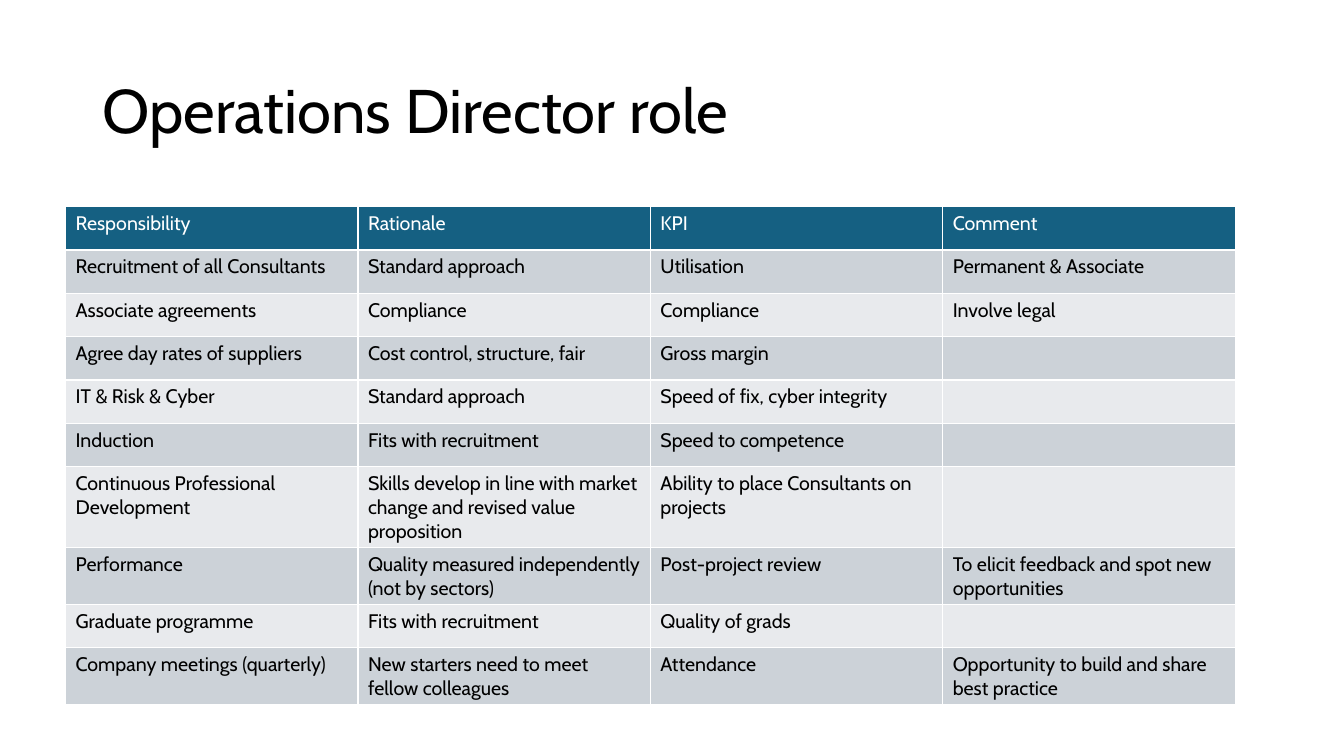
from pptx import Presentation
from pptx.dml.color import RGBColor
from pptx.enum.text import MSO_ANCHOR
from pptx.oxml import parse_xml
from pptx.oxml.ns import nsdecls
from pptx.util import Inches, Pt

FONT = "Cabin"
BLACK, WHITE = "000000", "FFFFFF"
HEADER_FILL = "156082"
BAND_FILLS = ("CCD2D8", "E8EAED")

TITLE = "Operations Director role"
HEADINGS = ("Responsibility", "Rationale", "KPI", "Comment")
DUTIES = [
    ("Recruitment of all Consultants", "Standard approach", "Utilisation",
     "Permanent & Associate"),
    ("Associate agreements", "Compliance", "Compliance", "Involve legal"),
    ("Agree day rates of suppliers", "Cost control, structure, fair", "Gross margin", ""),
    ("IT & Risk & Cyber", "Standard approach", "Speed of fix, cyber integrity", ""),
    ("Induction", "Fits with recruitment", "Speed to competence", ""),
    ("Continuous Professional Development",
     "Skills develop in line with market change and revised value proposition",
     "Ability to place Consultants on projects", ""),
    ("Performance", "Quality measured independently (not by sectors)",
     "Post-project review", "To elicit feedback and spot new opportunities"),
    ("Graduate programme", "Fits with recruitment", "Quality of grads", ""),
    ("Company meetings (quarterly)", "New starters need to meet fellow colleagues",
     "Attendance", "Opportunity to build and share best practice"),
]
COLUMN_WIDTH, ROW_HEIGHT = 2.9, 0.43


def rgb(code):
    return RGBColor.from_string(code)


def add_run(paragraph, text, size, color):
    run = paragraph.add_run()
    run.text = text
    run.font.name = FONT
    run.font.size = Pt(size)
    run.font.bold = False
    run.font.color.rgb = rgb(color)


def add_borders(cell):
    properties = cell._tc.get_or_add_tcPr()
    for side in "LRTB":
        properties.append(parse_xml(
            f'<a:ln{side} {nsdecls("a")} w="{Pt(1)}"><a:solidFill>'
            f'<a:srgbClr val="{WHITE}"/></a:solidFill></a:ln{side}>'))


def add_title(slide):
    frame = slide.shapes.add_textbox(
        Inches(0.92), Inches(0.4), Inches(11.5), Inches(1.45)).text_frame
    frame.word_wrap = True
    frame.vertical_anchor = MSO_ANCHOR.MIDDLE
    heading = frame.paragraphs[0]
    heading.line_spacing = 0.9
    add_run(heading, TITLE, 44, BLACK)


def add_duties(slide):
    rows = [HEADINGS, *DUTIES]
    table = slide.shapes.add_table(
        len(rows), len(HEADINGS), Inches(0.65), Inches(2.05),
        Inches(COLUMN_WIDTH * len(HEADINGS)), Inches(ROW_HEIGHT * len(rows))).table
    for column in table.columns:
        column.width = Inches(COLUMN_WIDTH)
    for r, texts in enumerate(rows):
        table.rows[r].height = Inches(ROW_HEIGHT)
        is_header = r == 0
        fill = HEADER_FILL if is_header else BAND_FILLS[(r - 1) % 2]
        for c, text in enumerate(texts):
            cell = table.cell(r, c)
            add_borders(cell)
            cell.fill.solid()
            cell.fill.fore_color.rgb = rgb(fill)
            if text:
                add_run(cell.text_frame.paragraphs[0], text, 14,
                        WHITE if is_header else BLACK)


def main():
    deck = Presentation()
    deck.slide_width, deck.slide_height = Inches(13.33), Inches(7.5)
    slide = deck.slides.add_slide(deck.slide_layouts[6])
    add_title(slide)
    add_duties(slide)
    deck.save("out.pptx")


if __name__ == "__main__":
    main()
